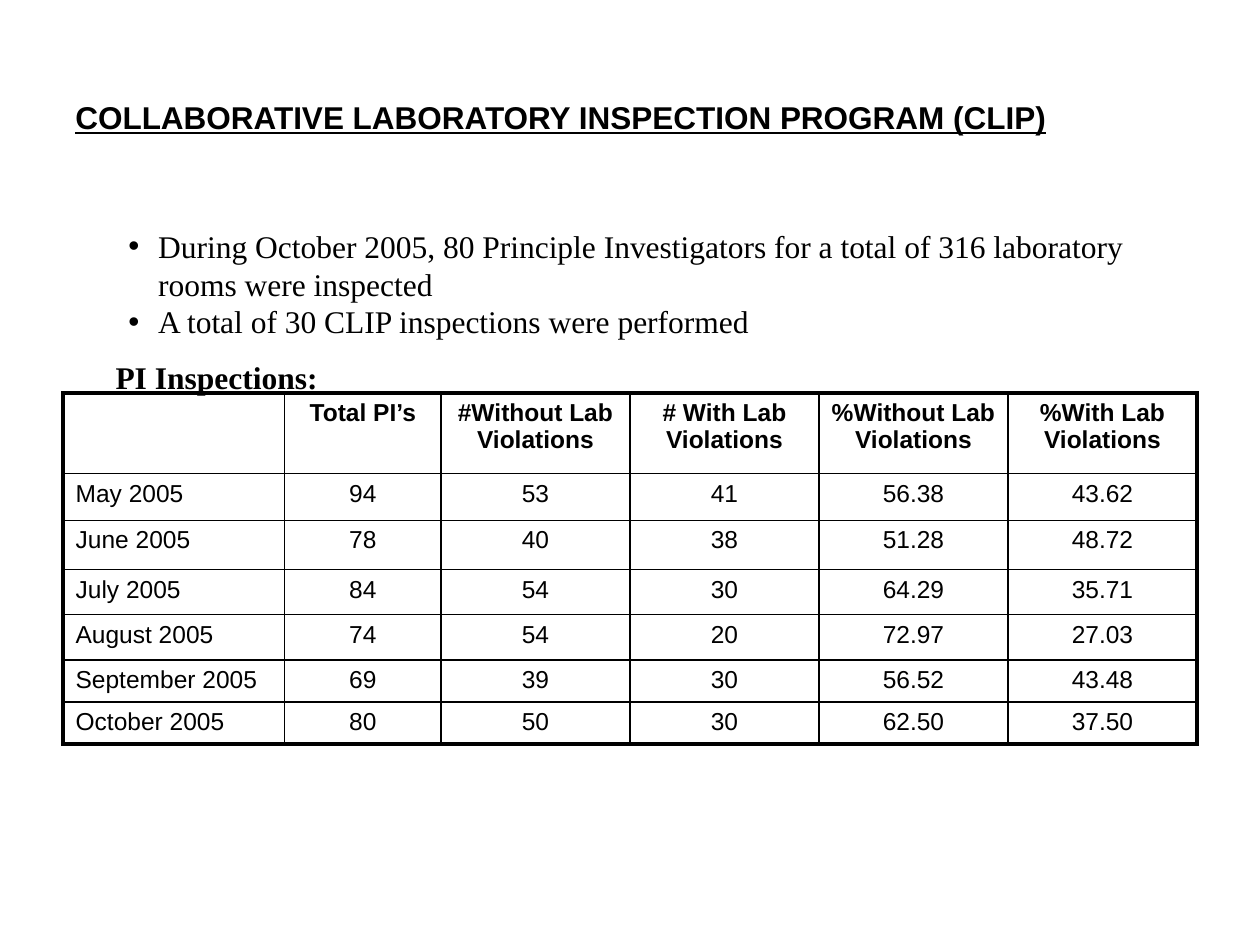
from lxml.etree import SubElement
from pptx import Presentation
from pptx.dml.color import RGBColor
from pptx.enum.text import MSO_ANCHOR, PP_ALIGN
from pptx.oxml.ns import qn
from pptx.util import Cm, Pt

INK = "000000"
WIDTHS = [4.47, 3.15] + [3.81] * 4
HEIGHTS = [1.63, 0.94, 0.99, 0.91, 0.91, 0.84, 0.84]
ROWS = [
    ["", "Total PI’s", "#Without Lab Violations", "# With Lab Violations",
     "%Without Lab Violations", "%With Lab Violations"],
    ["May 2005", "94", "53", "41", "56.38", "43.62"],
    ["June 2005", "78", "40", "38", "51.28", "48.72"],
    ["July 2005", "84", "54", "30", "64.29", "35.71"],
    ["August 2005", "74", "54", "20", "72.97", "27.03"],
    ["September 2005", "69", "39", "30", "56.52", "43.48"],
    ["October 2005", "80", "50", "30", "62.50", "37.50"],
]


def color(code):
    return RGBColor.from_string(code)


def style(para, font, size, bold=False, line=False):
    for run in para.runs:
        run.font.name = font
        run.font.size = Pt(size)
        run.font.bold = bold
        run.font.underline = line
        run.font.color.rgb = color(INK)


def add_text(slide, box, text, font, wrap=True, **look):
    frame = slide.shapes.add_textbox(*map(Cm, box)).text_frame
    frame.word_wrap = wrap
    frame.text = text
    for para in frame.paragraphs:
        style(para, font, 18, **look)
    return frame


def add_bullet(para):
    props = para._p.get_or_add_pPr()
    props.set("marL", str(Cm(0.6)))
    props.set("indent", str(-Cm(0.6)))
    SubElement(props, qn("a:buFont"), typeface="Arial")
    SubElement(props, qn("a:buChar"), char="•")


def add_edge(cell, side, width):
    props = cell._tc.get_or_add_tcPr()
    edge = SubElement(props, qn("a:ln" + side), w=str(Pt(width)))
    fill = SubElement(edge, qn("a:solidFill"))
    SubElement(fill, qn("a:srgbClr"), val=INK)


def fill_cell(cell, text, row, col):
    cell.text = text
    para = cell.text_frame.paragraphs[0]
    style(para, "Arial", 14, bold=row == 0)
    if row == 0 or col > 0:
        para.alignment = PP_ALIGN.CENTER
    outer = {"L": col == 0, "R": col == len(WIDTHS) - 1,
             "T": row == 0, "B": row == len(HEIGHTS) - 1}
    for side, thick in outer.items():
        add_edge(cell, side, 2.25 if thick else 1)
    cell.fill.background()


def add_grid(slide):
    frame = slide.shapes.add_table(
        len(ROWS), len(WIDTHS), Cm(1.27), Cm(7.92),
        Cm(sum(WIDTHS)), Cm(sum(HEIGHTS)))
    table = frame.table
    table.first_row = False
    table.horz_banding = False
    for col, width in zip(table.columns, WIDTHS):
        col.width = Cm(width)
    for row, height in zip(table.rows, HEIGHTS):
        row.height = Cm(height)
    for i, row in enumerate(ROWS):
        for j, text in enumerate(row):
            fill_cell(table.cell(i, j), text, i, j)


def main():
    deck = Presentation()
    deck.slide_width, deck.slide_height = Cm(25.4), Cm(19.05)
    slide = deck.slides.add_slide(deck.slide_layouts[6])
    title = add_text(slide, (1.27, 0.76, 22.86, 3.18),
                     "COLLABORATIVE LABORATORY INSPECTION PROGRAM (CLIP)",
                     "Arial", bold=True, line=True)
    title.vertical_anchor = MSO_ANCHOR.MIDDLE
    add_grid(slide)
    notes = add_text(
        slide, (2.34, 4.45, 21.16, 2.54),
        "During October 2005, 80 Principle Investigators for a total of 316 "
        "laboratory rooms were inspected\n"
        "A total of 30 CLIP inspections were performed", "Times New Roman")
    for para in notes.paragraphs:
        add_bullet(para)
    add_text(slide, (2.08, 7.09, 4.6, 1.02), "PI Inspections:",
             "Times New Roman", wrap=False, bold=True, line=True)
    deck.save("out.pptx")


if __name__ == "__main__":
    main()
